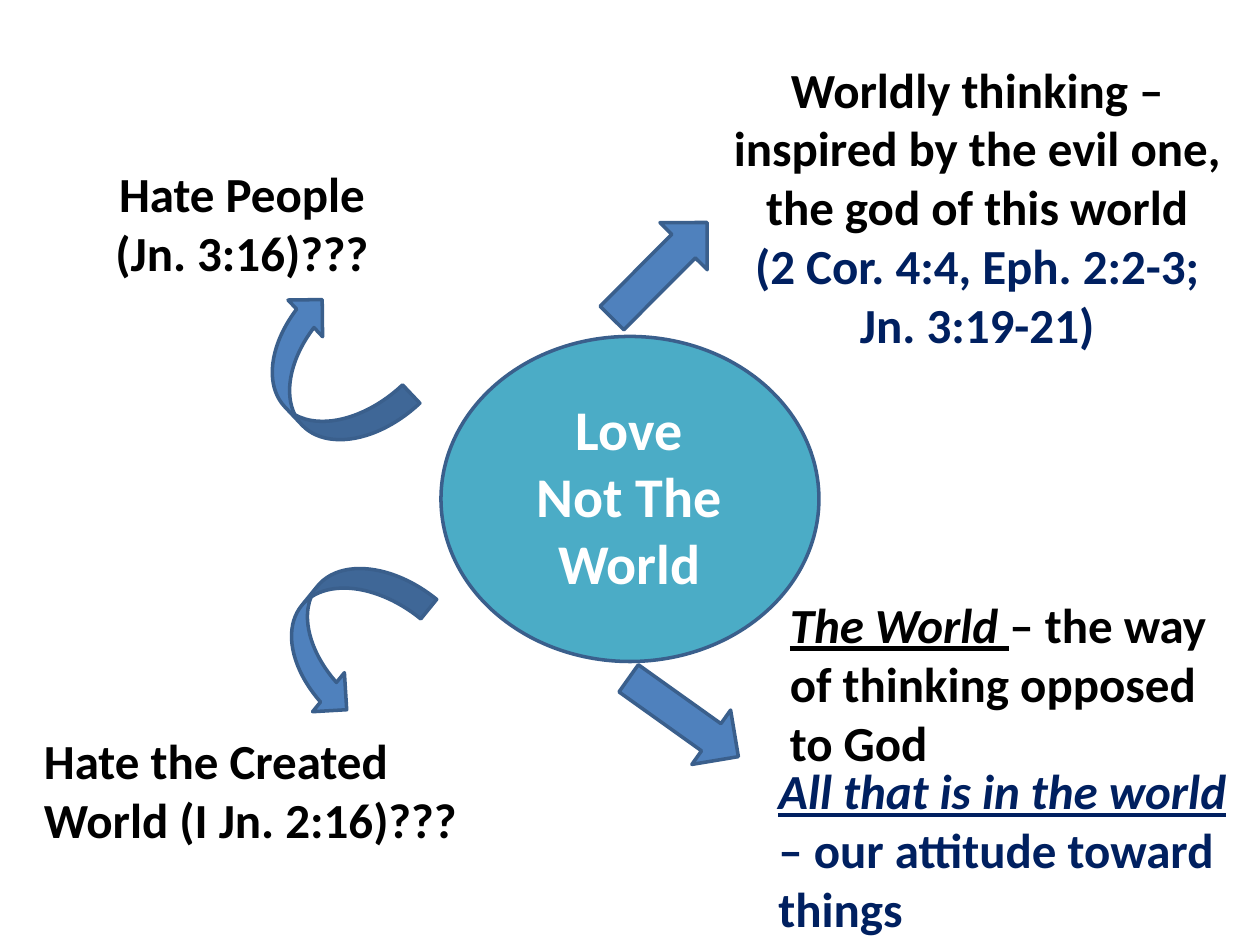
from pptx import Presentation
from pptx.dml.color import RGBColor
from pptx.enum.shapes import MSO_SHAPE as Shape
from pptx.enum.text import PP_ALIGN as Align
from pptx.util import Inches, Pt

BLACK = RGBColor(0, 0, 0)
WHITE = RGBColor(255, 255, 255)
NAVY = RGBColor(0x00, 0x20, 0x60)
TEAL = RGBColor(0x4B, 0xAC, 0xC6)
BLUE = RGBColor(0x4F, 0x81, 0xBD)
EDGE = RGBColor(0x3A, 0x5F, 0x8C)

prs = Presentation()
prs.slide_width, prs.slide_height = Inches(10), Inches(7.5)
slide = prs.slides.add_slide(prs.slide_layouts[6])


def add_form(kind, box, fill, turn=0):
    form = slide.shapes.add_shape(kind, *map(Inches, box))
    form.rotation = turn
    form.shadow.inherit = False
    form.fill.solid()
    form.fill.fore_color.rgb = fill
    form.line.color.rgb = EDGE
    form.line.width = Pt(2)


def add_label(box, runs, align=Align.LEFT, size=28):
    """Add bold text; each run is (text, colour, stressed), "\\n" breaks a line."""
    frame = slide.shapes.add_textbox(*map(Inches, box)).text_frame
    frame.word_wrap = True
    para = frame.paragraphs[0]
    para.alignment = align
    para.font.name = "Calibri"
    para.font.size = Pt(size)
    para.font.bold = True
    for text, color, stress in runs:
        for i, line in enumerate(text.split("\n")):
            if i:
                para.add_line_break()
            if line:
                run = para.add_run()
                run.text = line
                run.font.color.rgb = color
                if stress:
                    run.font.italic = run.font.underline = True


# Centre
add_form(Shape.OVAL, (3.5, 2.67, 3, 2.58), TEAL)
add_label((4.12, 3.08, 1.75, 1.72), [("Love Not The World", WHITE, False)],
          Align.CENTER, 32)

# Arrows to the four corners
for kind, box, turn in [
    (Shape.CURVED_DOWN_ARROW, (1.92, 2.59, 1.33, 0.8), 226.7),
    (Shape.CURVED_UP_ARROW, (2.07, 4.62, 1.33, 0.8), 129.2),
    (Shape.RIGHT_ARROW, (4.7, 1.88, 1.07, 0.53), 314.9),
    (Shape.RIGHT_ARROW, (4.89, 5.43, 1.07, 0.53), 35.5),
]:
    add_form(kind, box, BLUE, turn)

# Wrong readings on the left
add_label((0.42, 1.25, 3, 1.04),
          [("Hate People\n(Jn. 3:16)???", BLACK, False)], Align.CENTER)
add_label((0.25, 5.75, 3.58, 1.04),
          [("Hate the Created World (I Jn. 2:16)???", BLACK, False)])

# Meanings on the right
add_label((5.67, 0.42, 4.17, 2.46), [
    ("Worldly thinking –\ninspired by the evil one,\nthe god of this world", BLACK, False),
    ("\n(2 Cor. 4:4, Eph. 2:2-3;\nJn. 3:19-21)", NAVY, False),
], Align.CENTER)
add_label((6.17, 4.67, 3.58, 1.51), [
    ("The World ", BLACK, True),
    ("– the way of thinking opposed to God", BLACK, False),
])
add_label((6.08, 5.99, 3.92, 1.51), [
    ("All that is in the world ", NAVY, True),
    ("– our attitude toward things", NAVY, False),
])

prs.save("out.pptx")
